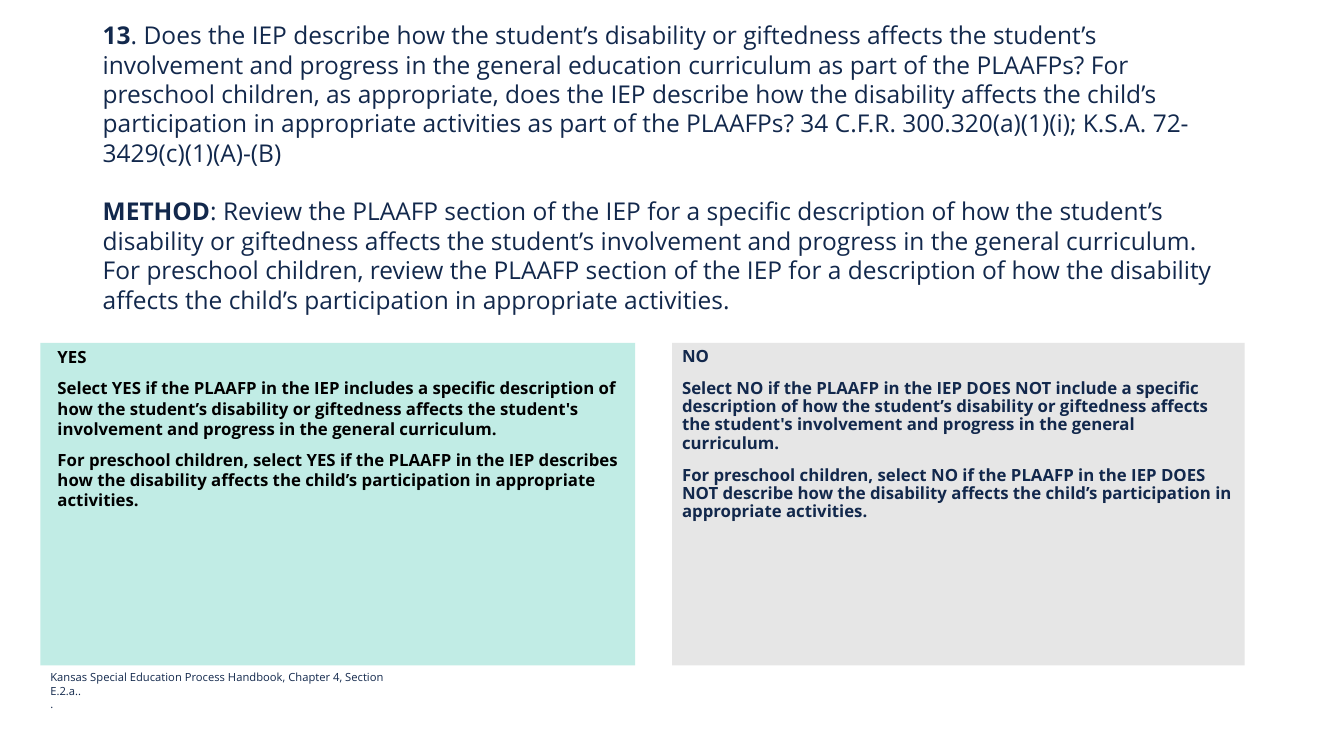
"""Build the slide on question 13 of the IEP review with its YES and NO criteria."""
import pptx
import pptx.dml.color
import pptx.enum.shapes
import pptx.enum.text
import pptx.util

Cm = pptx.util.Cm
Pt = pptx.util.Pt
NAVY, BLACK, MINT, GREY = "12284C", "000000", "C1ECE5", "E6E6E6"
FONT = "Open Sans"

QUESTION = [
    [("13", True),
     (". Does the IEP describe how the student’s disability or giftedness affects the student’s "
      "involvement and progress in the general education curriculum as part of the PLAAFPs? For "
      "preschool children, as appropriate, does the IEP describe how the disability affects the "
      "child’s participation in appropriate activities as part of the PLAAFPs? 34 C.F.R. "
      "300.320(a)(1)(i); K.S.A. 72-3429(c)(1)(A)-(B)", False)],
    [("METHOD", True),
     (": Review the PLAAFP section of the IEP for a specific description of how the student’s "
      "disability or giftedness affects the student’s involvement and progress in the general "
      "curriculum. For preschool children, review the PLAAFP section of the IEP for a description "
      "of how the disability affects the child’s participation in appropriate activities.", False)],
]
YES = [
    [("YES", True)],
    [("Select YES if the PLAAFP in the IEP includes a specific description of how the student’s "
      "disability or giftedness affects the student's involvement and progress in the general "
      "curriculum.", True)],
    [("For preschool children, select YES if the PLAAFP in the IEP describes how the disability "
      "affects the child’s participation in appropriate activities.", True)],
]
NO = [
    [("NO", True)],
    [("Select NO if the PLAAFP in the IEP DOES NOT include a specific description of how the "
      "student’s disability or giftedness affects the student's involvement and progress in the "
      "general curriculum.", True)],
    [("For preschool children, select NO if the PLAAFP in the IEP DOES NOT describe how the "
      "disability affects the child’s participation in appropriate activities.", True)],
]
SOURCE = [
    [("Kansas Special Education Process Handbook, Chapter 4, Section E.2.a..", False)],
    [(".", False)],
]

PANEL_TOP, PANEL_HEIGHT = 8.64, 8.13
WIDE_INSETS, YES_INSETS = (0.25, 0.13), (0.43, 0.1, 0.18)
BLOCKS = [
    dict(box=(2.34, 0.38, 29.21, 8.26), content=QUESTION, size=17.5, color=NAVY, gap=21),
    dict(box=(1.02, PANEL_TOP, 14.99, PANEL_HEIGHT), content=YES, size=12, color=BLACK, gap=8,
         fill=MINT, insets=YES_INSETS),
    dict(box=(16.94, PANEL_TOP, 14.43, PANEL_HEIGHT), content=NO, size=12, color=NAVY, gap=10,
         fill=GREY, spacing=0.9),
    dict(box=(1.02, PANEL_TOP + PANEL_HEIGHT, 9.53, 0.94), content=SOURCE, size=8, color=NAVY, gap=0),
]


def rgb(value):
    """Turn a hex string into a colour."""
    return pptx.dml.color.RGBColor.from_string(value)


def add_block(slide, box, content, size, color, gap, fill=None, insets=WIDE_INSETS, spacing=None):
    """Add a text box, or a filled panel, holding paragraphs of (text, bold) runs."""
    place = [Cm(length) for length in box]
    if fill:
        shape = slide.shapes.add_shape(pptx.enum.shapes.MSO_SHAPE.RECTANGLE, *place)
        shape.shadow.inherit = False
        shape.fill.solid()
        shape.fill.fore_color.rgb = rgb(fill)
        shape.line.fill.background()
    else:
        shape = slide.shapes.add_textbox(*place)
    frame = shape.text_frame
    frame.word_wrap = True
    frame.vertical_anchor = pptx.enum.text.MSO_ANCHOR.TOP
    frame.margin_left, frame.margin_right = Cm(insets[0]), Cm(insets[-1] if len(insets) > 2 else insets[0])
    frame.margin_top = frame.margin_bottom = Cm(insets[1])
    for index, runs in enumerate(content):
        paragraph = frame.add_paragraph() if index else frame.paragraphs[0]
        paragraph.alignment = pptx.enum.text.PP_ALIGN.LEFT
        if index and gap:
            paragraph.space_before = Pt(gap)
        if spacing:
            paragraph.line_spacing = spacing
        for text, bold in runs:
            run = paragraph.add_run()
            run.text = text
            run.font.name = FONT
            run.font.size = Pt(size)
            run.font.bold = bold
            run.font.color.rgb = rgb(color)


def main():
    """Create the slide and save it."""
    presentation = pptx.Presentation()
    presentation.slide_width, presentation.slide_height = Cm(33.87), Cm(19.05)
    slide = presentation.slides.add_slide(presentation.slide_layouts[6])
    for block in BLOCKS:
        add_block(slide, **block)
    presentation.save("out.pptx")


if __name__ == "__main__":
    main()
